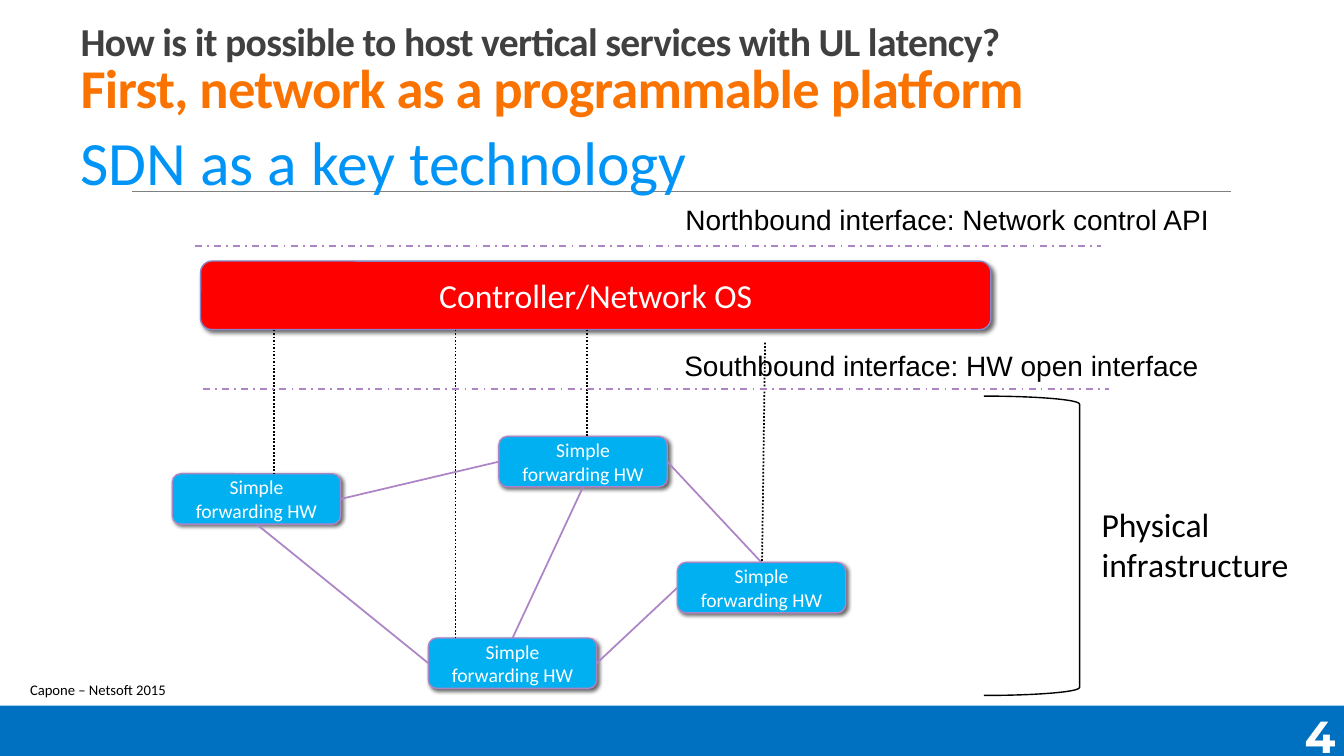
from lxml.etree import SubElement
from pptx import Presentation
from pptx.dml.color import RGBColor
from pptx.enum.dml import MSO_LINE
from pptx.enum.shapes import MSO_CONNECTOR, MSO_SHAPE
from pptx.enum.text import MSO_ANCHOR, MSO_AUTO_SIZE, PP_ALIGN
from pptx.oxml import parse_xml
from pptx.oxml.ns import nsdecls, qn
from pptx.util import Inches, Pt

CELL = Inches(0.1)
COLS, ROWS = 133.33, 75
BLACK = RGBColor(0x00, 0x00, 0x00)
WHITE = RGBColor(0xFF, 0xFF, 0xFF)
GREY = RGBColor(0x80, 0x80, 0x80)
DARK = RGBColor(0x40, 0x40, 0x40)
ORANGE = RGBColor(0xFA, 0x72, 0x00)
AZURE = RGBColor(0x00, 0x94, 0xF6)
BAND = RGBColor(0x00, 0x70, 0xC0)
SKY = RGBColor(0x00, 0xB0, 0xF0)
RED = RGBColor(0xFF, 0x00, 0x00)
PURPLE = RGBColor(0xAD, 0x84, 0xC6)
VIOLET = RGBColor(0x87, 0x84, 0xC7)
TOP, LEFT, BOTTOM, RIGHT = range(4)
SHADOW = (
    f'<a:effectLst {nsdecls("a")}>'
    '<a:outerShdw blurRad="38100" dist="25400" dir="2700000" algn="tl" rotWithShape="0">'
    '<a:srgbClr val="000000"><a:alpha val="60000"/></a:srgbClr>'
    '</a:outerShdw></a:effectLst>'
)


def cells(*values):
    """Convert grid columns or rows to lengths."""
    return [round(v * CELL) for v in values]


def apply(target, formats):
    """Set each named attribute on the target."""
    for name, value in formats.items():
        setattr(target, name, value)


def add_run(p, text, size, color, font="Calibri", bold=False):
    """Append a formatted run to a paragraph."""
    r = p.add_run()
    r.text = text
    apply(r.font, {"size": Pt(size), "name": font, "bold": bold})
    r.font.color.rgb = color
    return r


def add_label(s, box, text, size, color=BLACK, wrap=True, **font):
    """Add a text box that grows with its text."""
    tf = s.shapes.add_textbox(*cells(*box)).text_frame
    apply(tf, {"word_wrap": wrap, "auto_size": MSO_AUTO_SIZE.SHAPE_TO_FIT_TEXT})
    add_run(tf.paragraphs[0], text, size, color, **font)
    return tf


def add_shape(s, kind, box, fill=None, line=None):
    """Add a flat preset shape with an optional fill and outline."""
    sp = s.shapes.add_shape(kind, *cells(*box))
    sp.shadow.inherit = False
    if fill is None:
        sp.fill.background()
    else:
        sp.fill.solid()
        sp.fill.fore_color.rgb = fill
    if line is None:
        sp.line.fill.background()
    else:
        sp.line.color.rgb = line
        sp.line.width = Pt(1)
    return sp


def add_block(s, box, text, size, fill, line):
    """Add a rounded, shadowed block with centred text."""
    sp = add_shape(s, MSO_SHAPE.ROUNDED_RECTANGLE, box, fill, line)
    sp._element.spPr.replace(sp._element.spPr.find(qn("a:effectLst")), parse_xml(SHADOW))
    tf = sp.text_frame
    apply(tf, {"word_wrap": True, "vertical_anchor": MSO_ANCHOR.MIDDLE})
    tf.paragraphs[0].alignment = PP_ALIGN.CENTER
    add_run(tf.paragraphs[0], text, size, WHITE)
    return sp


def add_line(s, ends, color, width=1.25, dash=None):
    """Add a straight connector between two grid points."""
    c = s.shapes.add_connector(MSO_CONNECTOR.STRAIGHT, *cells(*ends))
    apply(c.line, {"width": Pt(width), "dash_style": dash})
    c.line.color.rgb = color
    SubElement(c._element.spPr, qn("a:effectLst"))
    return c


def add_link(s, start, start_site, end, end_site):
    """Join two blocks at the given connection sites."""
    c = add_line(s, (0, 0, 0, 0), PURPLE)
    c.begin_connect(start, start_site)
    c.end_connect(end, end_site)


def set_title(s):
    """Place and fill the two-line title."""
    title = s.shapes.title
    apply(title, dict(zip(("left", "top", "width", "height"), cells(7, -0.1, 120, 12.5))))
    tf = title.text_frame
    apply(tf, {"word_wrap": True, "vertical_anchor": MSO_ANCHOR.BOTTOM,
               "auto_size": MSO_AUTO_SIZE.NONE})
    p = tf.paragraphs[0]
    apply(p, {"alignment": PP_ALIGN.LEFT, "line_spacing": 0.85})
    question = add_run(p, "How is it possible to host vertical services with UL latency?",
                       28.3, DARK, bold=True)
    p.add_line_break()
    answer = add_run(p, "First, network as a programmable platform", 39, ORANGE, bold=True)
    for r in (question, answer):
        r._r.get_or_add_rPr().set("spc", "-50")


def add_network(s):
    """Draw the controller, the forwarding nodes and their links."""
    spots = [(17.1, 47), (49.5, 43.3), (67.2, 55.8), (42.5, 63.3)]
    west, north, east, south = [
        add_block(s, (x, y, 16.7, 5), "Simple forwarding HW", 14, SKY, PURPLE)
        for x, y in spots]
    for link in ((west, RIGHT, north, LEFT), (south, LEFT, west, BOTTOM),
                 (south, TOP, north, BOTTOM), (south, RIGHT, east, LEFT),
                 (north, RIGHT, east, TOP)):
        add_link(s, *link)
    add_block(s, (19.9, 25.9, 78.4, 6.8), "Controller/Network OS", 24, RED, VIOLET)
    for ends in ((27.2, 32.7, 27.2, 47), (58.2, 32.7, 58.2, 43.3),
                 (45.2, 32.7, 45.2, 63.3), (75.9, 34, 75.6, 55.8)):
        add_line(s, ends, BLACK, dash=MSO_LINE.ROUND_DOT)


def add_interfaces(s):
    """Draw the two interface lines with their labels."""
    for x, y, label_box, text in (
            (20.1, 38.6, (66.9, 34.1, 53.4, 4.4), "Southbound interface: HW open interface"),
            (19.3, 24.4, (67, 19.6, 55.1, 4.4), "Northbound interface: Network control API")):
        add_line(s, (x, y, x + 89.9, y), PURPLE, dash=MSO_LINE.DASH_DOT)
        add_label(s, label_box, text, 20, wrap=False, font="Arial")


def add_page_number(s):
    """Put the page number in the bottom band."""
    tf = add_label(s, (124.1, 71, 8.4, 4), "4", 32, WHITE, font="Montserrat", bold=True)
    apply(tf, {"auto_size": MSO_AUTO_SIZE.NONE, "vertical_anchor": MSO_ANCHOR.MIDDLE,
               "margin_left": 0, "margin_right": 0, "margin_top": 0, "margin_bottom": 0})
    tf.paragraphs[0].alignment = PP_ALIGN.RIGHT


def main():
    """Build and save the slide."""
    prs = Presentation()
    prs.slide_width, prs.slide_height = cells(COLS, ROWS)
    s = prs.slides.add_slide(prs.slide_layouts[5])
    add_shape(s, MSO_SHAPE.RECTANGLE, (0, 70, COLS, 5), BAND)
    add_line(s, (13.1, 19, 122.1, 19), GREY, 0.5)
    add_network(s)
    add_interfaces(s)
    add_label(s, (2, 67.1, 76.7, 2.9), "Capone – Netsoft 2015", 10.5)
    add_shape(s, MSO_SHAPE.RIGHT_BRACKET, (97.6, 39.3, 9.5, 29.7), line=BLACK)
    add_label(s, (108.3, 49.5, 23.3, 9.1), "Physical infrastructure", 24)
    set_title(s)
    add_label(s, (7, 11.8, 108.8, 8.4), "SDN as a key technology", 44, AZURE)
    add_page_number(s)
    prs.save("out.pptx")


if __name__ == "__main__":
    main()
